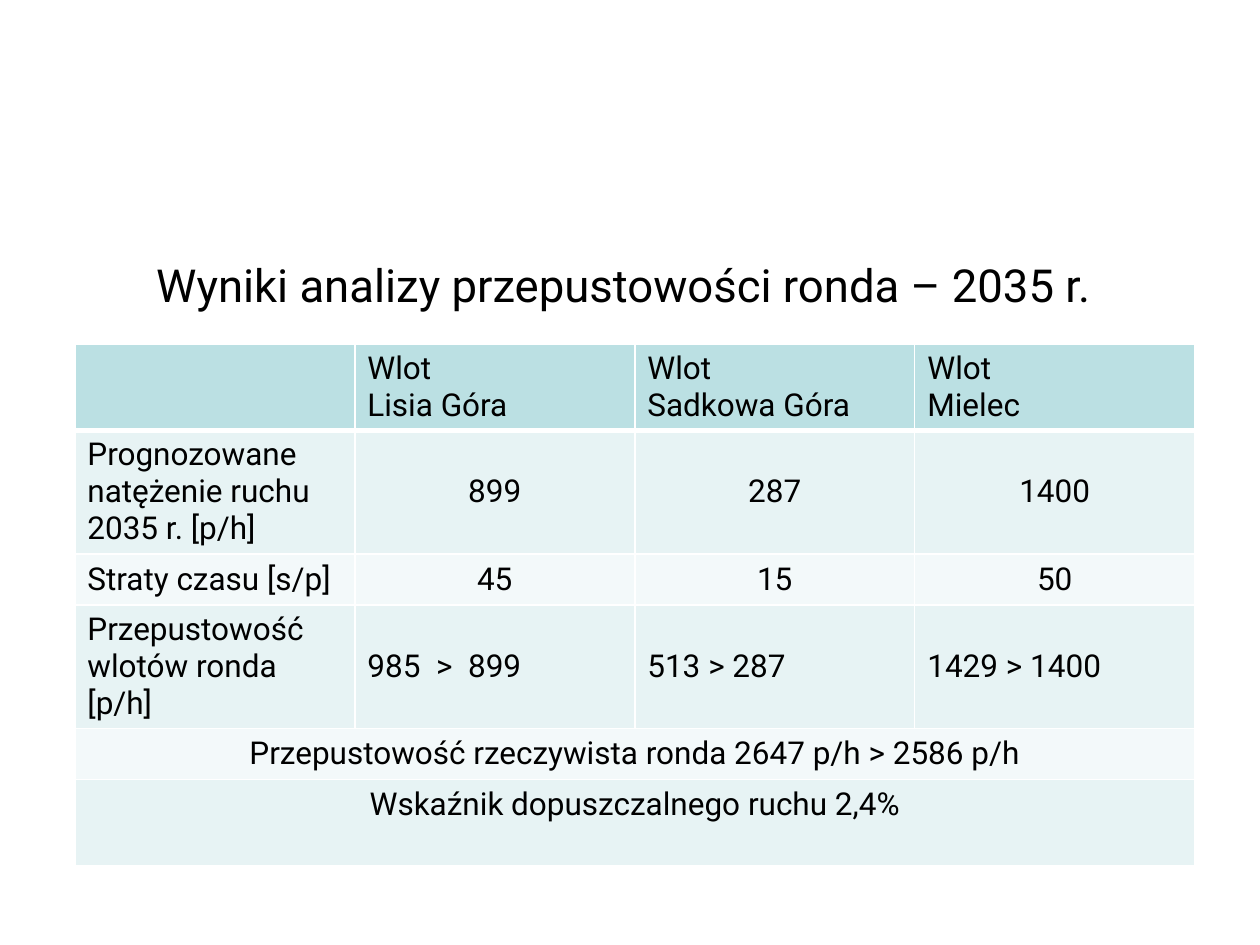
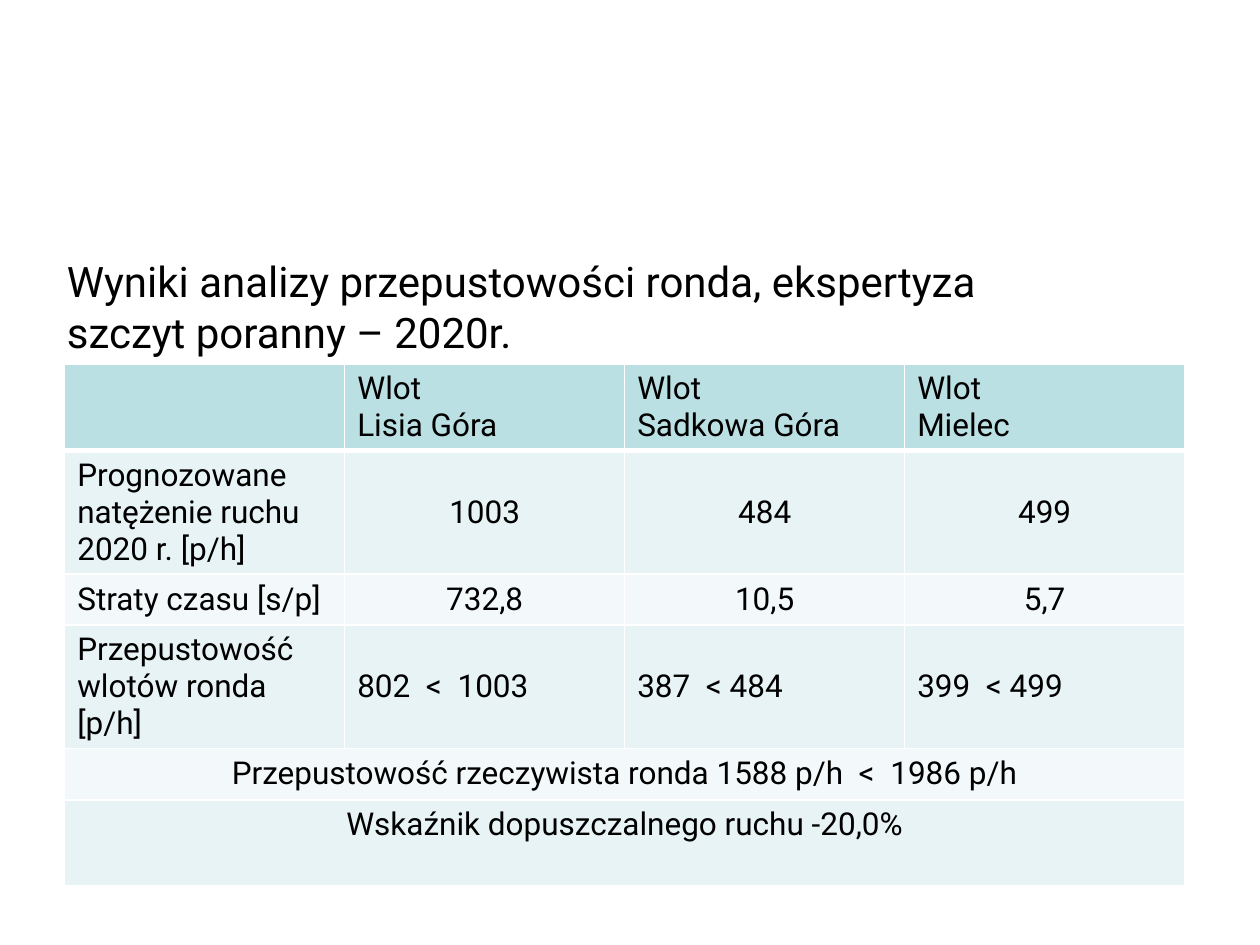
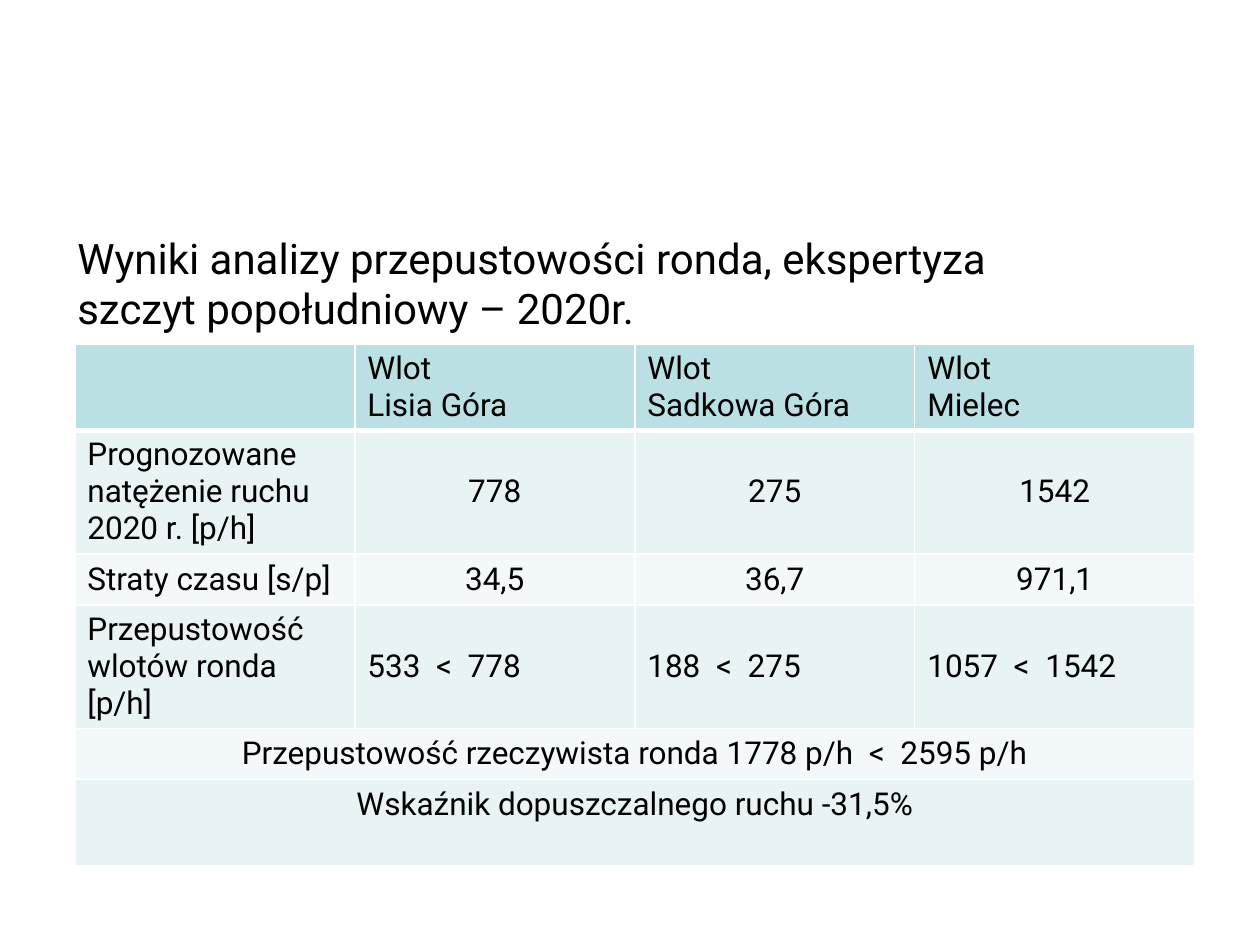
import pptx
import pptx.util
import pptx.dml.color
import pptx.enum.text
import pptx.oxml
import pptx.oxml.ns

Pt = pptx.util.Pt
Align = pptx.enum.text.PP_ALIGN
Anchor = pptx.enum.text.MSO_ANCHOR

FONT = "Roboto"
INK, LINE = "000000", "FFFFFF"
HEAD, DARK, PALE = "BBE0E3", "E7F3F4", "F3F9FA"
WIDTH = 160
HEIGHTS = [49, 70.5, 29.2, 70.5, 29.2, 49]


def paint(target, color):
    """Give a font or a fill one solid colour."""
    fill = target.fill if hasattr(target, "fill") else target
    fill.solid()
    fill.fore_color.rgb = pptx.dml.color.RGBColor.from_string(color)


def style(frame, size, align):
    """Format every paragraph and run of a text frame."""
    for para in frame.paragraphs:
        para.alignment = align
        for run in para.runs:
            run.font.name = FONT
            run.font.size = Pt(size)
            run.font.bold = False
            paint(run.font, INK)


# Title, its box and size, table corner, year, then the table values
slides = [
    ("Wyniki analizy przepustowości ronda – 2035 r.",
     (82, 139.5, 572.5, 45.5), 26, (42.75, 196.5), "2035",
     ["899", "287", "1400"], ["45", "15", "50"],
     ["985  >  899", "513 > 287", "1429 > 1400"],
     "2647 p/h > 2586 p/h", "2,4%"),
    ("Wyniki analizy przepustowości ronda, ekspertyza\nszczyt poranny – 2020r.",
     (31, 142, 672, 66), 24, (37, 208), "2020",
     ["1003", "484", "499"], ["732,8", "10,5", "5,7"],
     ["802  <  1003", "387  < 484", "399  < 499"],
     "1588 p/h  <  1986 p/h", "-20,0%"),
    ("Wyniki analizy przepustowości ronda, ekspertyza\nszczyt popołudniowy – 2020r.",
     (37, 128.5, 652.5, 66), 24, (42.75, 196.5), "2020",
     ["778", "275", "1542"], ["34,5", "36,7", "971,1"],
     ["533  <  778", "188  <  275", "1057  <  1542"],
     "1778 p/h  <  2595 p/h", "-31,5%"),
]

deck = pptx.Presentation()
deck.slide_width, deck.slide_height = Pt(720), Pt(540)

for name, box, size, corner, year, flow, delay, limit, total, rate in slides:
    slide = deck.slides.add_slide(deck.slide_layouts[5])

    # Title
    title = slide.shapes.title
    title.left, title.top, title.width, title.height = [Pt(v) for v in box]
    frame = title.text_frame
    frame.word_wrap = True
    frame.auto_size = pptx.enum.text.MSO_AUTO_SIZE.NONE
    frame.vertical_anchor = Anchor.MIDDLE
    frame.paragraphs[0].text = name
    style(frame, size, Align.LEFT)

    # Table grid
    rows = [
        ["", "Wlot\nLisia Góra", "Wlot\nSadkowa Góra", "Wlot\nMielec"],
        [f"Prognozowane natężenie ruchu {year} r. [p/h]"] + flow,
        ["Straty czasu [s/p]"] + delay,
        ["Przepustowość wlotów ronda\n[p/h]"] + limit,
        ["Przepustowość rzeczywista ronda " + total],
        ["Wskaźnik dopuszczalnego ruchu " + rate],
    ]
    table = slide.shapes.add_table(
        len(rows), 4, Pt(corner[0]), Pt(corner[1]),
        Pt(4 * WIDTH), Pt(sum(HEIGHTS))).table
    for col in table.columns:
        col.width = Pt(WIDTH)
    for row, height in zip(table.rows, HEIGHTS):
        row.height = Pt(height)

    # Borders and fills
    for r in range(len(rows)):
        for c in range(4):
            cell = table.cell(r, c)
            props = cell._tc.get_or_add_tcPr()
            for side in "LRTB":
                thick = (r, side) in [(0, "B"), (1, "T")]
                props.append(pptx.oxml.parse_xml(
                    f'<a:ln{side} {pptx.oxml.ns.nsdecls("a")} w="{Pt(3 if thick else 1)}">'
                    f'<a:solidFill><a:srgbClr val="{LINE}"/></a:solidFill></a:ln{side}>'))
            paint(cell, HEAD if r == 0 else DARK if r % 2 else PALE)

    # Cell text
    for r, row in enumerate(rows):
        if len(row) == 1:
            table.cell(r, 0).merge(table.cell(r, 3))
        for c, text in enumerate(row):
            cell = table.cell(r, c)
            cell.vertical_anchor = Anchor.TOP if r == 5 else Anchor.MIDDLE
            frame = cell.text_frame
            if r == 0:
                frame.paragraphs[0].text = text
            else:
                frame.text = text
            mid = len(row) == 1 or (r in (1, 2) and c > 0)
            style(frame, 18, Align.CENTER if mid else Align.LEFT)

deck.save("out.pptx")
